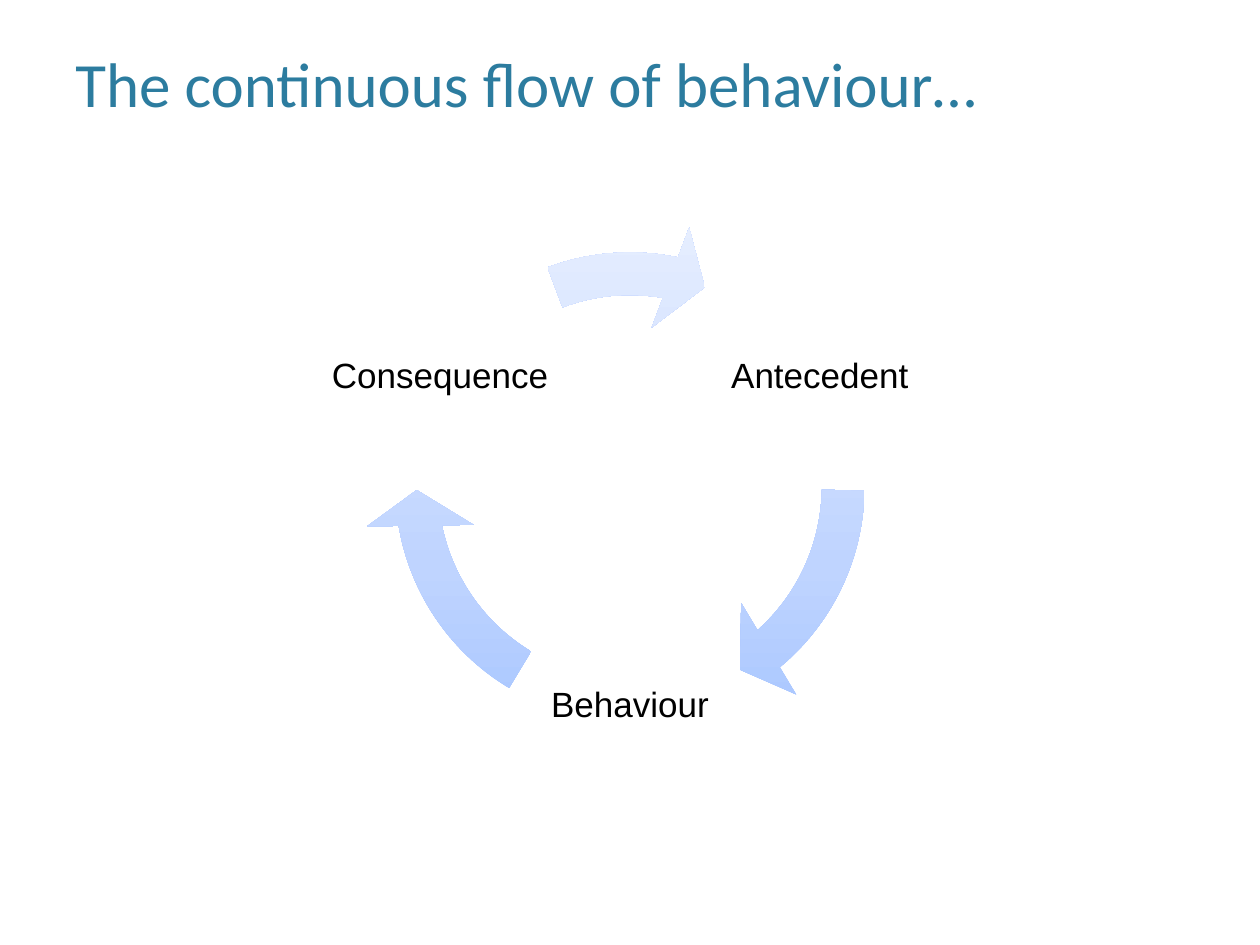
from copy import deepcopy
from math import cos, radians, sin

from pptx import Presentation
from pptx.dml.color import RGBColor
from pptx.enum.shapes import MSO_SHAPE
from pptx.enum.text import MSO_ANCHOR, PP_ALIGN
from pptx.util import Inches, Pt

ARROW = MSO_SHAPE.CIRCULAR_ARROW
TOP, MIDDLE = MSO_ANCHOR.TOP, MSO_ANCHOR.MIDDLE
LEFT, CENTER = PP_ALIGN.LEFT, PP_ALIGN.CENTER
TEAL = RGBColor(0x2C, 0x7C, 0x9F)
BLACK = RGBColor(0, 0, 0)
BLUES = [
    (0, RGBColor(0xA4, 0xC4, 0xFF)),
    (0.35, RGBColor(0xBF, 0xD4, 0xFF)),
    (1, RGBColor(0xE6, 0xEE, 0xFF)),
]

TITLE = "The continuous flow of behaviour…"
STAGES = [
    ("Antecedent", -30, 29.64, 0.52),
    ("Behaviour", 90, 101.73, 72.6),
    ("Consequence", 210, 168.57, 149.67),
]
MID_X, MID_Y = 5, 3.865
RADIUS, LABEL, RING = 1.74, 1.79, 4.23


def add_text(slide, text, box, font, size, color, anchor, align):
    shape = slide.shapes.add_textbox(*map(Inches, box))
    frame = shape.text_frame
    frame.word_wrap = True
    frame.vertical_anchor = anchor
    frame.text = text
    para = frame.paragraphs[0]
    para.alignment = align
    face = para.runs[0].font
    face.name, face.size = font, Pt(size)
    face.color.rgb = color
    return frame


def add_label(slide, text, angle):
    x = MID_X + RADIUS * cos(radians(angle)) - LABEL / 2
    y = MID_Y + RADIUS * sin(radians(angle)) - LABEL / 2
    frame = add_text(slide, text, (x, y, LABEL, LABEL), "Arial", 20,
                     BLACK, MIDDLE, CENTER)
    frame.margin_left = frame.margin_right = Inches(0.03)
    frame.margin_top = frame.margin_bottom = Inches(0.03)
    frame.paragraphs[0].line_spacing = 0.9


def add_arrow(slide, end, start):
    box = (MID_X - RING / 2, MID_Y - RING / 2, RING, RING)
    shape = slide.shapes.add_shape(ARROW, *map(Inches, box))
    shape.shadow.inherit = False
    shape.line.fill.background()
    for i, value in enumerate((0.08, 5.76, end, start, 0.1)):
        shape.adjustments[i] = value
    fill = shape.fill
    fill.gradient()
    fill.gradient_angle = 90
    first = shape._element.spPr.xpath("./a:gradFill/a:gsLst/a:gs")[0]
    first.addnext(deepcopy(first))
    for stop, (place, color) in zip(fill.gradient_stops, BLUES):
        stop.position = place
        stop.color.rgb = color


def main():
    deck = Presentation()
    deck.slide_width, deck.slide_height = Inches(10), Inches(7.5)
    slide = deck.slides.add_slide(deck.slide_layouts[6])
    add_text(slide, TITLE, (0.5, 0.3, 9, 1.25), "Calibri", 36,
             TEAL, TOP, LEFT)
    for name, angle, end, start in STAGES:
        add_label(slide, name, angle)
        add_arrow(slide, end, start)
    deck.save("out.pptx")


if __name__ == "__main__":
    main()
